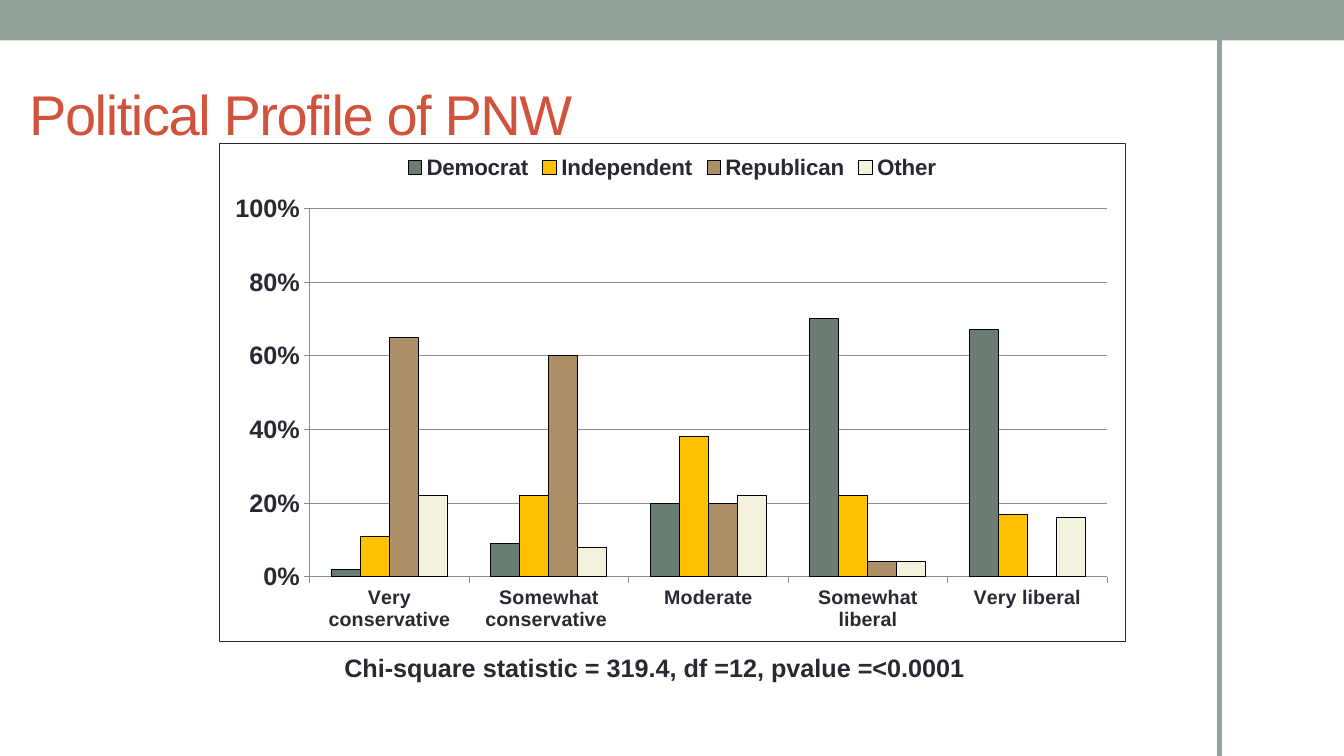
from lxml import etree
from pptx import Presentation
from pptx.chart.data import CategoryChartData
from pptx.dml.color import RGBColor
from pptx.enum.chart import XL_CHART_TYPE as ChartType, XL_LEGEND_POSITION as LegendPosition
from pptx.enum.chart import XL_TICK_MARK as TickMark
from pptx.enum.shapes import MSO_CONNECTOR as Connector, MSO_SHAPE as Shape
from pptx.enum.text import MSO_ANCHOR as Anchor, PP_ALIGN as Align
from pptx.oxml import parse_xml
from pptx.oxml.ns import nsdecls, qn
from pptx.util import Cm, Pt

FONT = "Arial"
SAGE = RGBColor(0x93, 0xA2, 0x99)
RUST = RGBColor(0xD2, 0x53, 0x3C)
INK = RGBColor(0x29, 0x29, 0x34)
WHITE = RGBColor(0xFF, 0xFF, 0xFF)
BLACK = RGBColor(0, 0, 0)
GRID_GREY = RGBColor(0x8C, 0x8C, 0x8C)

VIEWS = ["Very conservative", "Somewhat conservative ", "Moderate",
         "Somewhat liberal", "Very liberal"]
PARTIES = [
    ("Democrat", RGBColor(0x6B, 0x7D, 0x72), [0.02, 0.09, 0.2, 0.7, 0.67]),
    ("Independent", RGBColor(0xFF, 0xC0, 0x00), [0.11, 0.22, 0.38, 0.22, 0.17]),
    ("Republican", RGBColor(0xAD, 0x8F, 0x67), [0.65, 0.6, 0.2, 0.04, 0]),
    ("Other", RGBColor(0xF3, 0xF2, 0xDC), [0.22, 0.08, 0.22, 0.04, 0.16]),
]


def style_font(font, size, color, bold=False):
    font.name = FONT
    font.size = Pt(size)
    font.bold = bold
    font.color.rgb = color


def add_frame(slide, width, height):
    """Draw the band along the top and the rule at the right."""
    band = slide.shapes.add_shape(Shape.RECTANGLE, 0, 0, width, Cm(1.02))
    band.shadow.inherit = False
    band.fill.solid()
    band.fill.fore_color.rgb = SAGE
    band.line.fill.background()

    rule = slide.shapes.add_connector(Connector.STRAIGHT, Cm(30.73), Cm(0.97), Cm(30.73), height)
    rule.line.color.rgb = SAGE
    rule.line.width = Pt(3.25)
    etree.SubElement(rule._element.spPr, qn("a:effectLst"))


def set_title(slide, text):
    title = slide.shapes.title
    title.left, title.top, title.width, title.height = Cm(0.48), Cm(1.47), Cm(26.92), Cm(2.74)
    title.text_frame.vertical_anchor = Anchor.MIDDLE
    paragraph = title.text_frame.paragraphs[0]
    paragraph.alignment = Align.LEFT
    run = paragraph.add_run()
    run.text = text
    style_font(run.font, 40, RUST)
    run._r.get_or_add_rPr().set("spc", "-100")


def style_axis(axis, size):
    style_font(axis.tick_labels.font, size, INK, bold=True)
    axis.major_tick_mark = TickMark.OUTSIDE
    axis.minor_tick_mark = TickMark.NONE
    axis.format.line.color.rgb = GRID_GREY
    axis.format.line.width = Pt(0.75)


def frame_chart(chart):
    """Give the chart area a white fill and a thin dark border."""
    area = parse_xml(
        f'<c:spPr {nsdecls("c", "a")}>'
        f'<a:solidFill><a:srgbClr val="{WHITE}"/></a:solidFill>'
        f'<a:ln w="{Pt(0.75)}"><a:solidFill><a:srgbClr val="{INK}"/></a:solidFill></a:ln>'
        '</c:spPr>')
    chart._chartSpace.find(qn("c:txPr")).addprevious(area)


def place_plot(chart, **shares):
    """Fix the inner plot area, in shares of the chart's size."""
    plot_area = chart._chartSpace.chart.plotArea
    for layout in plot_area.findall(qn("c:layout")):
        plot_area.remove(layout)
    modes = '<c:xMode val="edge"/><c:yMode val="edge"/>'
    sizes = "".join(f'<c:{side} val="{share}"/>' for side, share in shares.items())
    plot_area.insert(0, parse_xml(
        f'<c:layout {nsdecls("c")}><c:manualLayout><c:layoutTarget val="inner"/>'
        f'{modes}{sizes}</c:manualLayout></c:layout>'))


def add_party_chart(slide):
    data = CategoryChartData(number_format="0%")
    data.categories = VIEWS
    for party, _, shares in PARTIES:
        data.add_series(party, shares)
    chart = slide.shapes.add_chart(ChartType.COLUMN_CLUSTERED, Cm(5.51), Cm(3.61),
                                   Cm(22.86), Cm(12.57), data).chart
    style_font(chart.font, 10, INK)
    chart.has_title = False
    frame_chart(chart)
    place_plot(chart, x=0.1, y=0.13, w=0.88, h=0.74)

    chart.has_legend = True
    chart.legend.position = LegendPosition.TOP
    chart.legend.include_in_layout = False
    style_font(chart.legend.font, 16, INK, bold=True)

    style_axis(chart.category_axis, 14)
    share_axis = chart.value_axis
    style_axis(share_axis, 18)
    share_axis.minimum_scale, share_axis.maximum_scale = 0, 1
    share_axis.major_unit = 0.2
    share_axis.tick_labels.number_format = "0%"
    share_axis.tick_labels.number_format_is_linked = False
    share_axis.has_major_gridlines = True
    share_axis.major_gridlines.format.line.color.rgb = GRID_GREY
    share_axis.major_gridlines.format.line.width = Pt(0.75)

    plot = chart.plots[0]
    plot.gap_width, plot.overlap = 150, 0
    plot.vary_by_categories = False
    for columns, (_, color, _) in zip(plot.series, PARTIES):
        columns.format.fill.solid()
        columns.format.fill.fore_color.rgb = color
        columns.format.line.color.rgb = BLACK
        columns.format.line.width = Pt(0.75)


def add_caption(slide, text):
    caption = slide.shapes.add_textbox(Cm(7.82), Cm(16.31), Cm(17.35), Cm(1.02))
    caption.text_frame.word_wrap = True
    paragraph = caption.text_frame.paragraphs[0]
    paragraph.alignment = Align.CENTER
    run = paragraph.add_run()
    run.text = text
    style_font(run.font, 18, INK, bold=True)


def main():
    deck = Presentation()
    deck.slide_width, deck.slide_height = Cm(33.87), Cm(19.05)
    slide = deck.slides.add_slide(deck.slide_layouts[5])
    add_frame(slide, deck.slide_width, deck.slide_height)
    set_title(slide, "Political Profile of PNW")
    add_party_chart(slide)
    add_caption(slide, "Chi-square statistic = 319.4, df =12, pvalue =<0.0001")
    deck.save("out.pptx")


if __name__ == "__main__":
    main()
